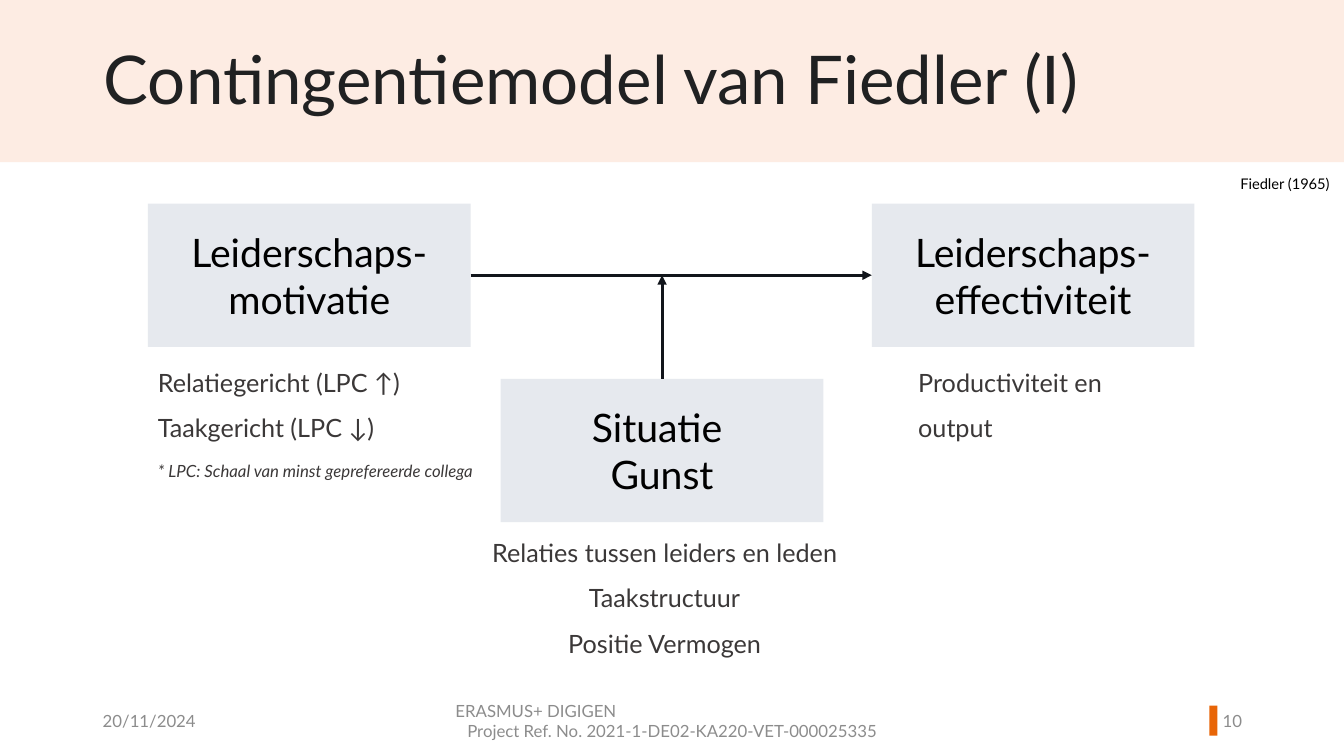
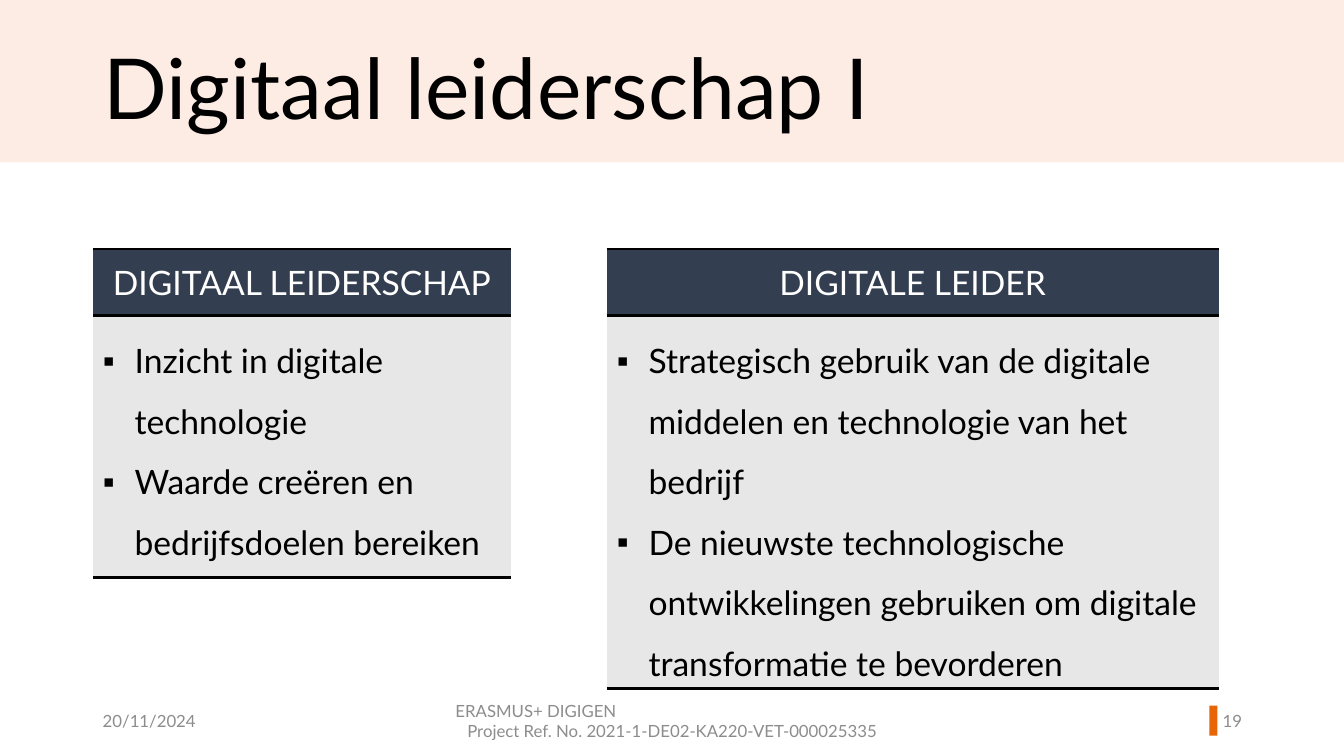
import lxml.etree
import pptx
import pptx.dml.color
import pptx.enum.shapes
import pptx.enum.text
import pptx.oxml.ns
import pptx.util

Cm = pptx.util.Cm
Pt = pptx.util.Pt
qn = pptx.oxml.ns.qn
Align = pptx.enum.text.PP_ALIGN
Anchor = pptx.enum.text.MSO_ANCHOR

FONT = "Lato"
COLOURS = {
    "band": "FDECE3",
    "marker": "E86507",
    "footer": "8C8C8C",
    "title": "202122",
    "black": "000000",
    "white": "FFFFFF",
    "body": "3B3838",
    "box": "E6E9EE",
    "arrow": "11151B",
    "header": "333F50",
    "cell": "E7E7E7",
}
SLIDE_WIDTH, SLIDE_HEIGHT = 33.87, 19.05
FOOTER_TOP, FOOTER_HEIGHT = 17.65, 1.02
BOX_WIDTH, BOX_HEIGHT = 8.13, 3.61
TABLE_TOP, HEADER_HEIGHT = 6.27, 1.68


def rgb(name):
    return pptx.dml.color.RGBColor.from_string(COLOURS[name])


def add_span(para, text, size, colour, italic=False):
    span = para.add_run()
    span.text = text
    span.font.name = FONT
    span.font.size = Pt(size)
    span.font.italic = italic
    span.font.color.rgb = rgb(colour)


def write_lines(frame, lines, size, colour, align=Align.LEFT, spacing=1.0):
    for index, line in enumerate(lines):
        para = frame.paragraphs[0] if index == 0 else frame.add_paragraph()
        para.alignment = align
        para.line_spacing = spacing
        add_span(para, line, size, colour)
    return frame.paragraphs


def add_text(page, place, lines, size, colour, align=Align.LEFT, spacing=1.0, anchor=Anchor.TOP):
    box = page.shapes.add_textbox(*map(Cm, place))
    box.text_frame.word_wrap = True
    box.text_frame.vertical_anchor = anchor
    write_lines(box.text_frame, lines, size, colour, align, spacing)
    return box


def add_block(page, place, colour):
    block = page.shapes.add_shape(pptx.enum.shapes.MSO_SHAPE.RECTANGLE, *map(Cm, place))
    block.shadow.inherit = False
    block.fill.solid()
    block.fill.fore_color.rgb = rgb(colour)
    block.line.fill.background()
    return block


def add_box(page, left, top, lines):
    box = add_block(page, (left, top, BOX_WIDTH, BOX_HEIGHT), "box")
    box.text_frame.word_wrap = True
    box.text_frame.vertical_anchor = Anchor.MIDDLE
    write_lines(box.text_frame, lines, 28, "black", Align.CENTER)
    return box


def add_arrow(page, start, end):
    arrow = page.shapes.add_connector(pptx.enum.shapes.MSO_CONNECTOR.STRAIGHT, *start, *end)
    arrow.line.color.rgb = rgb("arrow")
    arrow.line.width = Pt(2.25)
    properties = arrow.element.spPr
    lxml.etree.SubElement(properties.find(qn("a:ln")), qn("a:tailEnd"), type="triangle")
    lxml.etree.SubElement(properties, qn("a:effectLst"))
    return arrow


def set_borders(cell):
    properties = cell._tc.get_or_add_tcPr()
    for index, side in enumerate(("lnL", "lnR", "lnT", "lnB")):
        line = lxml.etree.Element(qn("a:" + side), w=str(Pt(2)))
        if side in ("lnT", "lnB"):
            fill = lxml.etree.SubElement(line, qn("a:solidFill"))
            lxml.etree.SubElement(fill, qn("a:srgbClr"), val=COLOURS["black"])
        else:
            lxml.etree.SubElement(line, qn("a:noFill"))
        properties.insert(index, line)


def set_bullet(para):
    properties = para._p.get_or_add_pPr()
    properties.set("marL", str(Cm(0.8)))
    properties.set("indent", str(-Cm(0.8)))
    lxml.etree.SubElement(properties, qn("a:buFont"), typeface="Arial")
    lxml.etree.SubElement(properties, qn("a:buChar"), char="▪")


def add_list_table(page, left, width, body_height, heading, items):
    place = (left, TABLE_TOP, width, HEADER_HEIGHT + body_height)
    table = page.shapes.add_table(2, 1, *map(Cm, place)).table
    table.first_row = False
    table.horz_banding = False
    table.rows[0].height = Cm(HEADER_HEIGHT)
    table.rows[1].height = Cm(body_height)
    header, body = table.cell(0, 0), table.cell(1, 0)
    for cell, colour in ((header, "header"), (body, "cell")):
        cell.fill.solid()
        cell.fill.fore_color.rgb = rgb(colour)
        set_borders(cell)
    header.vertical_anchor = Anchor.MIDDLE
    write_lines(header.text_frame, [heading], 24, "white", Align.CENTER)
    for para in write_lines(body.text_frame, items, 24, "black", spacing=1.5):
        set_bullet(para)


def add_footer(page, number):
    def footer_text(left, width, lines, align=Align.LEFT):
        place = (left, FOOTER_TOP, width, FOOTER_HEIGHT)
        return add_text(page, place, lines, 12, "footer", align, anchor=Anchor.MIDDLE)

    footer_text(2.34, 7.62, ["20/11/2024"])
    project = footer_text(
        11.23, 11.43,
        ["ERASMUS+ DIGIGEN", "Project Ref. No. 2021-1-DE02-KA220-VET-000025335"])
    project.text_frame.paragraphs[1].alignment = Align.CENTER
    footer_text(29.9, 1.65, [number], Align.RIGHT)


def add_page(deck, layout, title, size, colour, number):
    page = deck.slides.add_slide(layout)
    heading = page.shapes.title
    heading.left, heading.top, heading.width, heading.height = map(Cm, (2.36, 1.05, 25.22, 2.16))
    frame = heading.text_frame
    frame.auto_size = pptx.enum.text.MSO_AUTO_SIZE.NONE
    frame.vertical_anchor = Anchor.TOP
    write_lines(frame, [title], size, colour, spacing=0.9)
    add_footer(page, number)
    return page


def decorate_layout(layout, page):
    band = add_block(page, (0, 0, SLIDE_WIDTH, 4.09), "band")
    marker = add_block(page, (30.48, 17.78, 0.2, 0.76), "marker")
    for position, block in enumerate((band, marker), start=2):
        layout.shapes.element.insert(position, block.element)


def fill_model_page(page):
    motivation = add_box(page, 3.73, 5.13, ["Leiderschaps-motivatie"])
    effect = add_box(page, 21.97, 5.13, ["Leiderschaps-effectiviteit"])
    situation = add_box(page, 12.62, 9.55, ["Situatie ", "Gunst"])
    middle = motivation.top + motivation.height // 2
    centre = situation.left + situation.width // 2
    across = add_arrow(page, (motivation.left + motivation.width, middle), (effect.left, middle))
    across.begin_connect(motivation, 3)
    across.end_connect(effect, 1)
    upward = add_arrow(page, (centre, situation.top), (centre, middle))
    upward.begin_connect(situation, 0)

    add_text(page, (31.01, 4.27, 2.86, 0.74), ["Fiedler (1965)"], 10.5, "black")
    add_text(page, (22.89, 8.74, 6.32, 2.6), ["Productiviteit en output"], 18, "body", spacing=1.5)
    styles = add_text(
        page, (3.73, 8.74, 9.32, 3.61),
        ["Relatiegericht (LPC ↑)", "Taakgericht (LPC ↓)"], 18, "body", spacing=1.5)
    note = styles.text_frame.add_paragraph()
    note.line_spacing = 1.5
    add_span(note, "* LPC: Schaal van minst geprefereerde collega", 12, "body", italic=True)
    for para in styles.text_frame.paragraphs[1:]:
        para.space_after = Pt(6)
    add_text(
        page, (11.86, 13.03, 9.78, 3.63),
        ["Relaties tussen leiders en leden", "Taakstructuur", "Positie Vermogen"],
        18, "body", Align.CENTER, 1.5)


def fill_leadership_page(page):
    add_list_table(page, 2.34, 10.54, 6.6, "DIGITAAL LEIDERSCHAP", [
        "Inzicht in digitale technologie",
        "Waarde creëren en bedrijfsdoelen bereiken",
    ])
    add_list_table(page, 15.29, 15.42, 9.27, "DIGITALE LEIDER", [
        "Strategisch gebruik van de digitale middelen en technologie van het bedrijf",
        "De nieuwste technologische ontwikkelingen gebruiken om digitale transformatie te bevorderen",
    ])


def main():
    deck = pptx.Presentation()
    deck.slide_width, deck.slide_height = Cm(SLIDE_WIDTH), Cm(SLIDE_HEIGHT)
    layout = deck.slide_layouts.get_by_name("Title Only")
    model = add_page(deck, layout, "Contingentiemodel van Fiedler (I)", 48, "title", "10")
    decorate_layout(layout, model)
    fill_model_page(model)
    leadership = add_page(deck, layout, "Digitaal leiderschap I", 60, "black", "19")
    fill_leadership_page(leadership)
    deck.save("out.pptx")


if __name__ == "__main__":
    main()
